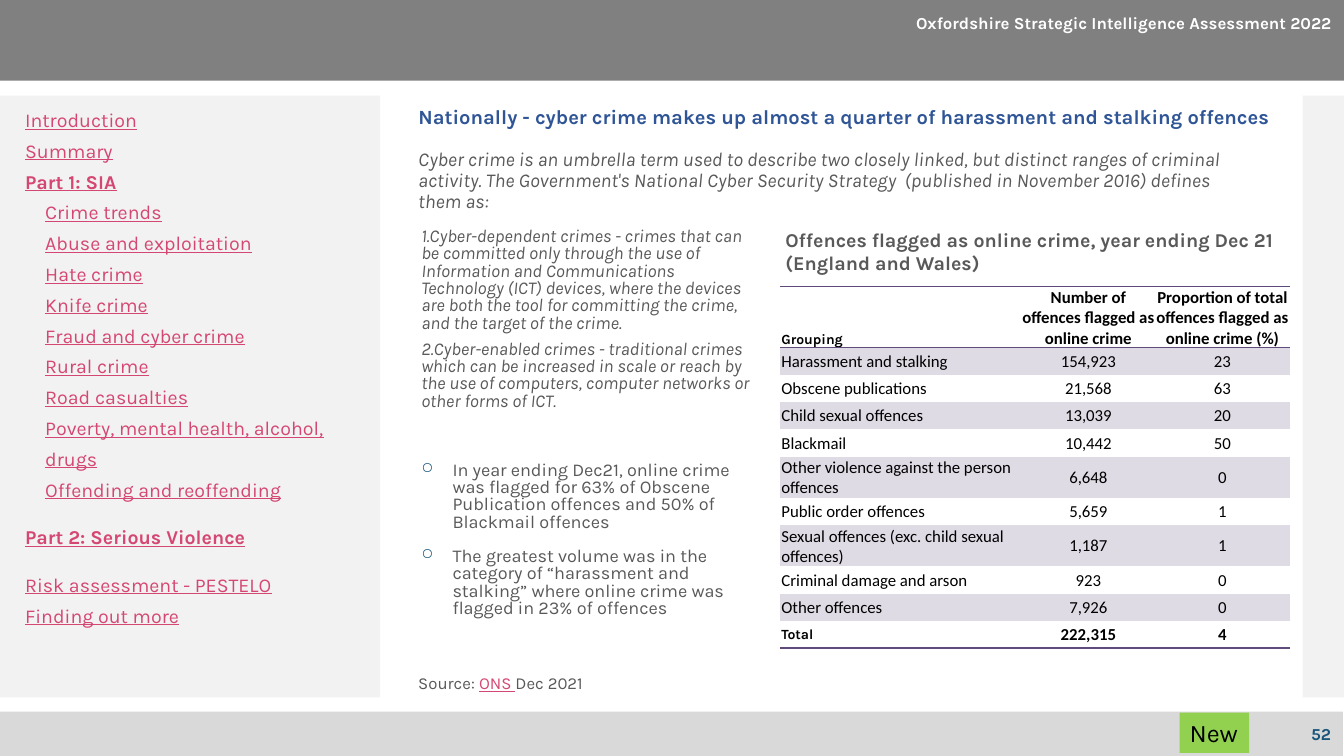
from lxml import etree
from pptx import Presentation
from pptx.dml.color import RGBColor
from pptx.enum.shapes import MSO_SHAPE
from pptx.enum.text import MSO_ANCHOR, PP_ALIGN
from pptx.oxml.ns import qn
from pptx.util import Inches, Pt

RECTANGLE = MSO_SHAPE.RECTANGLE
TOP, MIDDLE, BOTTOM = MSO_ANCHOR.TOP, MSO_ANCHOR.MIDDLE, MSO_ANCHOR.BOTTOM
LEFT, CENTER, RIGHT = PP_ALIGN.LEFT, PP_ALIGN.CENTER, PP_ALIGN.RIGHT

TEXT_FONT, TABLE_FONT = "Karla", "Calibri"
GREY, PINK, BLUE, NAVY = "595959", "D54773", "2F5597", "19567C"
PURPLE, BAND = "604A7B", "DFDBE5"
NO_GRID_STYLE = "{2D5ABB26-0587-4C30-8999-92F81FD0307C}"

# Label, level, bold, space before in points
MENU = [
    ("Introduction", 0, False, 0),
    ("Summary", 0, False, 0),
    ("Part 1: SIA", 0, True, 0),
    ("Crime trends", 1, False, 0),
    ("Abuse and exploitation", 1, False, 0),
    ("Hate crime", 1, False, 0),
    ("Knife crime", 1, False, 0),
    ("Fraud and cyber crime", 1, False, 0),
    ("Rural crime", 1, False, 0),
    ("Road casualties", 1, False, 0),
    ("Poverty, mental health, alcohol, drugs", 1, False, 0),
    ("Offending and reoffending", 1, False, 0),
    ("Part 2: Serious Violence", 0, True, 12),
    ("Risk assessment - PESTELO", 0, False, 12),
    ("Finding out more", 0, False, 0),
]
INTRO = (
    "Cyber crime is an umbrella term used to describe two closely linked, but distinct "
    "ranges of criminal activity. The Government's National Cyber Security Strategy  "
    "(published in November 2016) defines them as:"
)
DEFINITIONS = [
    "1.Cyber-dependent crimes - crimes that can be committed only through the use of "
    "Information and Communications Technology (ICT) devices, where the devices are both "
    "the tool for committing the crime, and the target of the crime.",
    "2.Cyber-enabled crimes - traditional crimes which can be increased in scale or reach by "
    "the use of computers, computer networks or other forms of ICT.",
]
FINDINGS = [
    "In year ending Dec21, online crime was flagged for 63% of Obscene Publication offences "
    "and 50% of Blackmail offences",
    "The greatest volume was in the category of “harassment and stalking” where online crime "
    "was flagged in 23% of offences",
]
OFFENCES = [
    ("Grouping", "Number of offences flagged as online crime",
     "Proportion of total offences flagged as online crime (%)"),
    ("Harassment and stalking", "154,923", "23"),
    ("Obscene publications", "21,568", "63"),
    ("Child sexual offences", "13,039", "20"),
    ("Blackmail", "10,442", "50"),
    ("Other violence against the person offences", "6,648", "0"),
    ("Public order offences", "5,659", "1"),
    ("Sexual offences (exc. child sexual offences)", "1,187", "1"),
    ("Criminal damage and arson", "923", "0"),
    ("Other offences", "7,926", "0"),
    ("Total", "222,315", "4"),
]


def color(value):
    return RGBColor.from_string(value)


def set_font(font, size, fill, name=TEXT_FONT, bold=False, italic=False, underline=False):
    font.name, font.size, font.bold, font.italic = name, Pt(size), bold, italic
    font.underline = underline
    font.color.rgb = color(fill)


def add_panel(slide, box, fill):
    panel = slide.shapes.add_shape(RECTANGLE, *map(Inches, box))
    panel.shadow.inherit = False
    panel.fill.solid()
    panel.fill.fore_color.rgb = color(fill)
    panel.line.fill.background()
    return panel


def add_text_frame(slide, box, anchor=TOP):
    frame = slide.shapes.add_textbox(*map(Inches, box)).text_frame
    frame.word_wrap = True
    frame.vertical_anchor = anchor
    return frame


def add_paragraph(frame, text, size, fill, align=LEFT, spacing=1.0, before=0, **style):
    """Fill the first paragraph if it is empty, otherwise append one."""
    paragraph = frame.paragraphs[0]
    if paragraph.runs:
        paragraph = frame.add_paragraph()
    paragraph.text = text
    paragraph.alignment = align
    paragraph.line_spacing = spacing
    paragraph.space_before = Pt(before)
    set_font(paragraph.font, size, fill, **style)
    return paragraph


def indent(paragraph, margin, first_line=0):
    properties = paragraph._p.get_or_add_pPr()
    properties.set("marL", str(Inches(margin)))
    properties.set("indent", str(Inches(first_line)))
    return properties


def add_bullet(paragraph):
    properties = indent(paragraph, 0.31, -0.31)
    bullet_color = etree.Element(qn("a:buClr"))
    etree.SubElement(bullet_color, qn("a:srgbClr"), val=NAVY)
    bullet_parts = [
        bullet_color,
        etree.Element(qn("a:buSzPct"), val="85000"),
        etree.Element(qn("a:buChar"), char="○"),
    ]
    position = properties.index(properties.find(qn("a:defRPr")))
    properties[position:position] = bullet_parts


def set_title(slide, box, text):
    title = slide.shapes.title
    title.left, title.top, title.width, title.height = map(Inches, box)
    title.text_frame.vertical_anchor = TOP
    title.text_frame.word_wrap = True
    add_paragraph(title.text_frame, text, 14.4, BLUE, spacing=Pt(20), bold=True)


def add_menu(slide, box):
    left, top, width, height = box
    add_panel(slide, box, "F2F2F2")
    frame = add_text_frame(slide, (left + 0.15, top, width - 0.25, height))
    for label, level, bold, before in MENU:
        paragraph = add_paragraph(frame, label, 14, PINK, spacing=Pt(22), before=before,
                                  bold=bold, underline=True)
        paragraph.level = level
        indent(paragraph, 0.2 * level)


def add_narrative(slide, box):
    left, top, width, height = box
    intro = add_text_frame(slide, (left, top, width, 0.8))
    add_paragraph(intro, INTRO, 14, GREY, spacing=0.9, before=6, italic=True)

    points = add_text_frame(slide, (left + 0.03, top + 0.79, 3.52, 4.2))
    for text in DEFINITIONS:
        add_paragraph(points, text, 12.9, GREY, spacing=0.8, before=6, italic=True)
    for text, before in zip(FINDINGS, (37, 12)):
        add_bullet(add_paragraph(points, text, 12.9, GREY, spacing=0.8, before=before))

    source = add_text_frame(slide, (left, top + height - 0.38, width, 0.38), BOTTOM)
    paragraph = source.paragraphs[0]
    paragraph.line_spacing = 0.9
    for text, fill in (("Source: ", GREY), ("ONS ", PINK), ("Dec 2021", GREY)):
        run = paragraph.add_run()
        run.text = text
        set_font(run.font, 12, fill, underline=fill == PINK)


def add_border(cell, side):
    """Draw a purple line on one side; call for lnT before lnB."""
    properties = cell._tc.get_or_add_tcPr()
    line = etree.Element(qn(f"a:{side}"), w=str(Pt(1)))
    fill = etree.SubElement(line, qn("a:solidFill"))
    etree.SubElement(fill, qn("a:srgbClr"), val=PURPLE)
    properties.insert(len(properties.findall(qn("a:lnT"))), line)


def add_offence_table(slide, box):
    left, top, width, height = box
    heading = add_text_frame(slide, (left - 0.05, top, 5.22, 0.57))
    add_paragraph(heading, "Offences flagged as online crime, year ending Dec 21 "
                  "(England and Wales)", 14, GREY, bold=True)

    last = len(OFFENCES) - 1
    table_box = (left, top + 0.63, width, height - 0.63)
    table = slide.shapes.add_table(last + 1, 3, *map(Inches, table_box)).table
    table.first_row = table.horz_banding = False
    table._tbl.tblPr.find(qn("a:tableStyleId")).text = NO_GRID_STYLE
    for column, column_width in zip(table.columns, (2.39, 1.33, 1.33)):
        column.width = Inches(column_width)
    for row_index, values in enumerate(OFFENCES):
        table.rows[row_index].height = Inches(0.27)
        strong = row_index in (0, last)
        for column_index, text in enumerate(values):
            cell = table.cell(row_index, column_index)
            cell.margin_left = cell.margin_right = cell.margin_top = Inches(0.01)
            cell.margin_bottom = 0
            cell.vertical_anchor = MIDDLE if row_index else BOTTOM
            label = strong and column_index == 0
            add_paragraph(cell.text_frame, text, 10 if label else 12, "000000",
                          align=CENTER if column_index else LEFT, bold=strong,
                          name=TEXT_FONT if label else TABLE_FONT)
            if row_index % 2:
                cell.fill.solid()
                cell.fill.fore_color.rgb = color(BAND)
            else:
                cell.fill.background()
            if row_index == 0:
                add_border(cell, "lnT")
            if strong:
                add_border(cell, "lnB")


def add_header(slide, box):
    left, top, width, height = box
    add_panel(slide, box, "808080")
    frame = add_text_frame(slide, (left + width - 5.15, top + 0.03, 5.13, 0.4), MIDDLE)
    add_paragraph(frame, "Oxfordshire Strategic Intelligence Assessment 2022", 12, "FFFFFF",
                  align=RIGHT, bold=True)


def add_footer(slide, box):
    left, top, width, height = box
    add_panel(slide, box, "D9D9D9")
    number = add_text_frame(slide, (left + width - 1.69, top + 0.02, 1.67, 0.4), MIDDLE)
    add_paragraph(number, "52", 12, NAVY, align=RIGHT, bold=True)
    badge = add_panel(slide, (left + 11.71, top + 0.01, 0.69, 0.4), "92D050").text_frame
    badge.word_wrap = False
    badge.vertical_anchor = TOP
    add_paragraph(badge, "New", 18, "000000")


def main():
    presentation = Presentation()
    presentation.slide_width, presentation.slide_height = Inches(13.33), Inches(7.5)
    slide = presentation.slides.add_slide(presentation.slide_layouts[5])
    add_footer(slide, (-0.01, 7.06, 13.33, 0.44))
    add_header(slide, (0, 0, 13.33, 0.8))
    add_menu(slide, (0, 0.95, 3.77, 5.97))
    add_panel(slide, (12.92, 0.95, 0.42, 5.97), "F2F2F2")
    set_title(slide, (4.05, 0.95, 8.86, 0.44),
              "Nationally - cyber crime makes up almost a quarter of harassment and "
              "stalking offences")
    add_narrative(slide, (4.05, 1.43, 8.5, 5.5))
    add_offence_table(slide, (7.74, 2.21, 5.05, 4.46))
    presentation.save("out.pptx")


if __name__ == "__main__":
    main()
